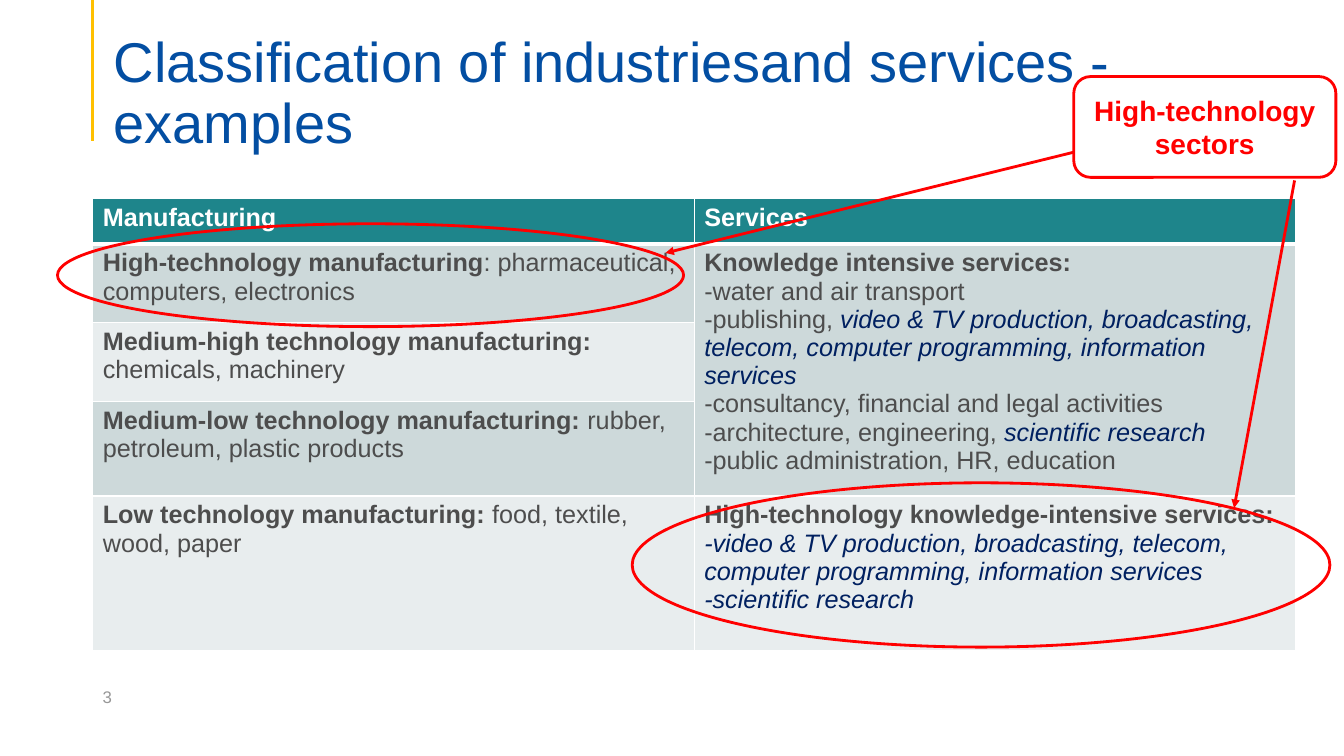
from lxml import etree
from pptx import Presentation
from pptx import util as u
from pptx.dml.color import RGBColor
from pptx.enum import shapes, text
from pptx.oxml.ns import qn

RED, BLUE, NAVY, GREY, WHITE = "FF0000", "034EA2", "002060", "4D4D4D", "FFFFFF"
TEAL, DARK, LIGHT = "1E858B", "CDD9DA", "E8EDEE"


def color(code):
    return RGBColor.from_string(code)


class Deck:
    """Holds the slide and its style."""

    font = "Arial"

    def __init__(self):
        self.prs = Presentation()
        self.prs.slide_width = u.Inches(13.33)
        self.prs.slide_height = u.Inches(7.5)
        self.slide = self.prs.slides.add_slide(self.prs.slide_layouts[6])
        self.items = self.slide.shapes

    def style(self, run, size, tint, bold=False, italic=False):
        font = run.font
        font.name, font.size = self.font, u.Pt(size)
        font.bold, font.italic = bold, italic
        font.color.rgb = color(tint)

    def label(self, words, box, size, tint, anchor, spacing=1.0, bottom=0.05):
        frame = self.items.add_textbox(*map(u.Inches, box)).text_frame
        frame.word_wrap = True
        frame.vertical_anchor = anchor
        frame.margin_bottom = u.Inches(bottom)
        frame.text = words
        para = frame.paragraphs[0]
        para.line_spacing = spacing
        self.style(para.runs[0], size, tint)

    def outline(self, kind, box, words=""):
        shape = self.items.add_shape(kind, *map(u.Inches, box))
        shape.shadow.inherit = False
        shape.fill.background()
        shape.line.color.rgb = color(RED)
        shape.line.width = u.Pt(2)
        if words:
            frame = shape.text_frame
            frame.word_wrap = True
            frame.vertical_anchor = text.MSO_ANCHOR.MIDDLE
            frame.text = words
            frame.paragraphs[0].alignment = text.PP_ALIGN.CENTER
            self.style(frame.paragraphs[0].runs[0], 20, RED, bold=True)

    def line(self, start, end, tint, width, arrow=False):
        ends = map(u.Inches, (*start, *end))
        link = self.items.add_connector(shapes.MSO_CONNECTOR.STRAIGHT, *ends)
        link.line.color.rgb = color(tint)
        link.line.width = u.Pt(width)
        props = link._element.spPr
        if arrow:
            etree.SubElement(props.find(qn("a:ln")), qn("a:tailEnd"), type="triangle")
        etree.SubElement(props, qn("a:effectLst"))

    def borders(self, cell, base):
        props = cell._tc.get_or_add_tcPr()
        for spot, side in enumerate("LRTB"):
            width = base if side == "B" else 1
            edge = etree.Element(qn("a:ln" + side), w=str(u.Pt(width)))
            fill = etree.SubElement(edge, qn("a:solidFill"))
            etree.SubElement(fill, qn("a:srgbClr"), val=WHITE)
            props.insert(spot, edge)

    def fill_in(self, cell, paras):
        """Fill a cell; each paragraph is a list of (kind, words)."""
        looks = {"head": (WHITE, True, False), "bold": (GREY, True, False),
                 "plain": (GREY, False, False), "tech": (NAVY, False, True)}
        frame = cell.text_frame
        frame.text = "\n" * (len(paras) - 1)
        for para, parts in zip(frame.paragraphs, paras):
            for kind, words in parts:
                run = para.add_run()
                run.text = words
                self.style(run, 18, *looks[kind])

    def table(self, box, heights, rows, merge):
        grid = self.items.add_table(len(rows), len(rows[0]), *map(u.Inches, box)).table
        grid.first_row = grid.horz_banding = False
        for row, height in zip(grid.rows, heights):
            row.height = u.Inches(height)
        for r, row in enumerate(rows):
            for c, paras in enumerate(row):
                cell = grid.cell(r, c)
                cell.fill.solid()
                cell.fill.fore_color.rgb = color(TEAL if r == 0 else DARK if r % 2 else LIGHT)
                self.borders(cell, 3 if r == 0 else 1)
                if paras:
                    self.fill_in(cell, paras)
        first, last = merge
        grid.cell(*first).merge(grid.cell(*last))


ROWS = [
    [[[("head", "Manufacturing")]], [[("head", "Services")]]],
    [[[("bold", "High-technology manufacturing"),
       ("plain", ": pharmaceutical, computers, electronics")]],
     [[("bold", "Knowledge intensive services:")],
      [("plain", "-water and air transport")],
      [("plain", "-publishing, "),
       ("tech", "video & TV production, broadcasting, telecom, "
                "computer programming, information services")],
      [("plain", "-consultancy, financial and legal activities")],
      [("plain", "-architecture, engineering, "), ("tech", "scientific research")],
      [("plain", "-public administration, HR, education")]]],
    [[[("bold", "Medium-high technology manufacturing: "),
       ("plain", "chemicals, machinery")]], None],
    [[[("bold", "Medium-low technology manufacturing: "),
       ("plain", "rubber, petroleum, plastic products")]], None],
    [[[("bold", "Low technology manufacturing: "),
       ("plain", "food, textile, wood, paper")]],
     [[("bold", "High-technology knowledge-intensive services:")],
      [("tech", "-video & TV production, broadcasting, telecom, "
                "computer programming, information services")],
      [("tech", "-scientific research")]]],
]


def main():
    deck = Deck()

    # Title, accent line and page number
    deck.line((0.92, 0), (0.92, 1.4), "FFC000", 2.25)
    deck.label("Classification of industriesand services - examples",
               (1.03, 0.52, 10.12, 1.02), 40, BLUE, text.MSO_ANCHOR.BOTTOM, 0.9, 0)
    deck.label("3", (0.92, 6.71, 3, 0.4), 12, "979797", text.MSO_ANCHOR.MIDDLE)

    # Sector table
    heights = (0.45, 0.78, 0.78, 0.82, 1.53)
    deck.table((0.92, 1.97, 11.93, sum(heights)), heights, ROWS, ((1, 1), (3, 1)))

    # High-technology highlights
    kinds = shapes.MSO_SHAPE
    deck.outline(kinds.OVAL, (0.57, 2.22, 6.21, 1.02))
    deck.outline(kinds.OVAL, (6.27, 4.79, 6.92, 1.63))
    deck.outline(kinds.ROUNDED_RECTANGLE, (10.65, 0.76, 2.6, 1), "High-technology sectors")
    deck.line((10.65, 1.51), (6.6, 2.51), RED, 2, arrow=True)
    deck.line((12.84, 1.79), (12.24, 5.04), RED, 2, arrow=True)

    deck.prs.save("out.pptx")


if __name__ == "__main__":
    main()
